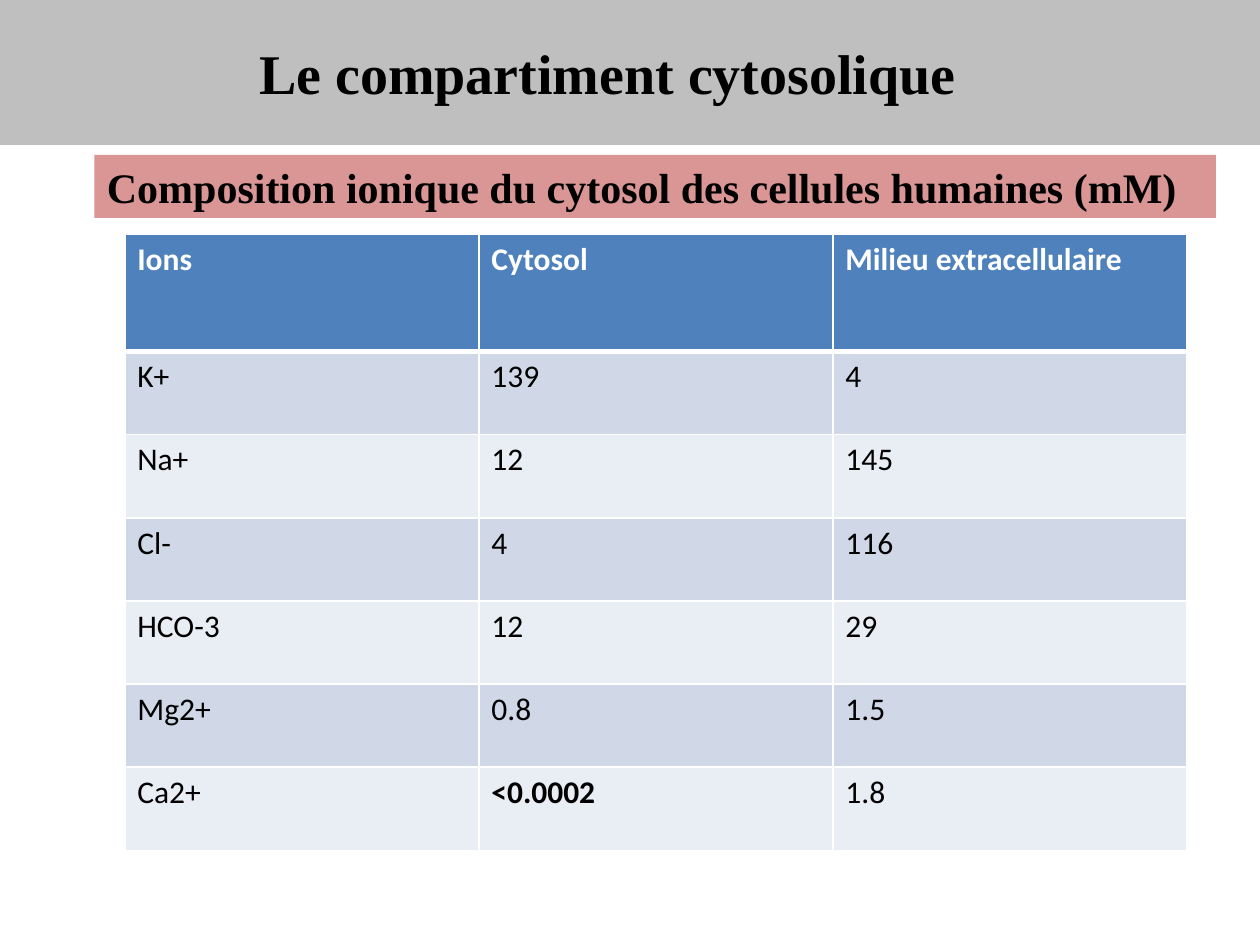
from dataclasses import dataclass

import pptx
import pptx.dml.color
import pptx.enum.text
import pptx.oxml
import pptx.oxml.ns
import pptx.util
from pptx.util import Inches

COLORS = {
    "band": "BFBFBF",
    "subtitle": "D99694",
    "header": "4F81BD",
    "odd_row": "D0D8E8",
    "even_row": "E9EDF4",
    "black": "000000",
    "white": "FFFFFF",
}
HEADINGS = ("Ions", "Cytosol", "Milieu extracellulaire")
COLUMN_WIDTH, HEADER_HEIGHT, ROW_HEIGHT = 2.81, 0.93, 0.66


@dataclass
class Ion:
    name: str
    cytosol: str
    outside: str
    bold_cytosol: bool = False


@dataclass
class Style:
    font: str
    size: int
    color: str = "black"
    bold: bool = False


IONS = [
    Ion("K+", "139", "4"),
    Ion("Na+", "12", "145"),
    Ion("Cl-", "4", "116"),
    Ion("HCO-3", "12", "29"),
    Ion("Mg2+", "0.8", "1.5"),
    Ion("Ca2+", "<0.0002", "1.8", bold_cytosol=True),
]


def paint(fill, color: str) -> None:
    fill.solid()
    fill.fore_color.rgb = pptx.dml.color.RGBColor.from_string(COLORS[color])


def write(frame, text: str, style: Style) -> None:
    frame.text = text
    for span in frame.paragraphs[0].runs:
        span.font.name = style.font
        span.font.size = pptx.util.Pt(style.size)
        span.font.bold = style.bold
        span.font.color.rgb = pptx.dml.color.RGBColor.from_string(COLORS[style.color])


def place(box, left: float, top: float, width: float, height: float) -> None:
    box.left, box.top = Inches(left), Inches(top)
    box.width, box.height = Inches(width), Inches(height)


def add_borders(cell, top: int = 1, bottom: int = 1) -> None:
    """Put white borders, in points, ahead of the cell's fill."""
    properties = cell._tc.get_or_add_tcPr()
    sides = {"lnL": 1, "lnR": 1, "lnT": top, "lnB": bottom}
    for index, (side, points) in enumerate(sides.items()):
        line = pptx.oxml.parse_xml(
            f'<a:{side} {pptx.oxml.ns.nsdecls("a")} w="{pptx.util.Pt(points)}">'
            f'<a:solidFill><a:srgbClr val="{COLORS["white"]}"/></a:solidFill></a:{side}>'
        )
        properties.insert(index, line)


def add_ion_table(page) -> None:
    row_count, column_count = len(IONS) + 1, len(HEADINGS)
    table = page.shapes.add_table(
        row_count, column_count, Inches(0.99), Inches(1.86),
        Inches(column_count * COLUMN_WIDTH),
        Inches(HEADER_HEIGHT + len(IONS) * ROW_HEIGHT),
    ).table
    for column in table.columns:
        column.width = Inches(COLUMN_WIDTH)
    for index, row in enumerate(table.rows):
        row.height = Inches(ROW_HEIGHT if index else HEADER_HEIGHT)

    # Header row
    for cell, heading in zip(table.rows[0].cells, HEADINGS):
        write(cell.text_frame, heading, Style("Calibri", 18, "white", True))
        paint(cell.fill, "header")
        add_borders(cell, bottom=3)

    # One banded row for each ion
    for index, ion in enumerate(IONS, start=1):
        texts = (ion.name, ion.cytosol, ion.outside)
        for column, text in enumerate(texts):
            cell = table.cell(index, column)
            bold = ion.bold_cytosol and column == 1
            write(cell.text_frame, text, Style("Calibri", 18, bold=bold))
            paint(cell.fill, "odd_row" if index % 2 else "even_row")
            add_borders(cell, top=3 if index == 1 else 1)


def main() -> None:
    deck = pptx.Presentation()
    deck.slide_width, deck.slide_height = Inches(10), Inches(7.5)
    page = deck.slides.add_slide(deck.slide_layouts[5])

    # Title band, its text set slightly left of centre
    title = page.shapes.title
    place(title, 0, 0, 10, 1.15)
    paint(title.fill, "band")
    write(title.text_frame, "Le compartiment cytosolique",
          Style("Times New Roman", 32, bold=True))
    title.text_frame.paragraphs[0].alignment = pptx.enum.text.PP_ALIGN.CENTER
    title.text_frame.vertical_anchor = pptx.enum.text.MSO_ANCHOR.MIDDLE
    title.text_frame.auto_size = pptx.enum.text.MSO_AUTO_SIZE.NONE
    title.text_frame.margin_right = Inches(0.45)

    add_ion_table(page)

    # Subtitle
    subtitle = page.shapes.add_textbox(
        Inches(0.75), Inches(1.23), Inches(8.9), Inches(0.5))
    paint(subtitle.fill, "subtitle")
    subtitle.text_frame.word_wrap = True
    subtitle.text_frame.auto_size = pptx.enum.text.MSO_AUTO_SIZE.SHAPE_TO_FIT_TEXT
    write(subtitle.text_frame,
          "Composition ionique du cytosol des cellules humaines (mM)",
          Style("Times New Roman", 24, bold=True))

    deck.save("out.pptx")


if __name__ == "__main__":
    main()
